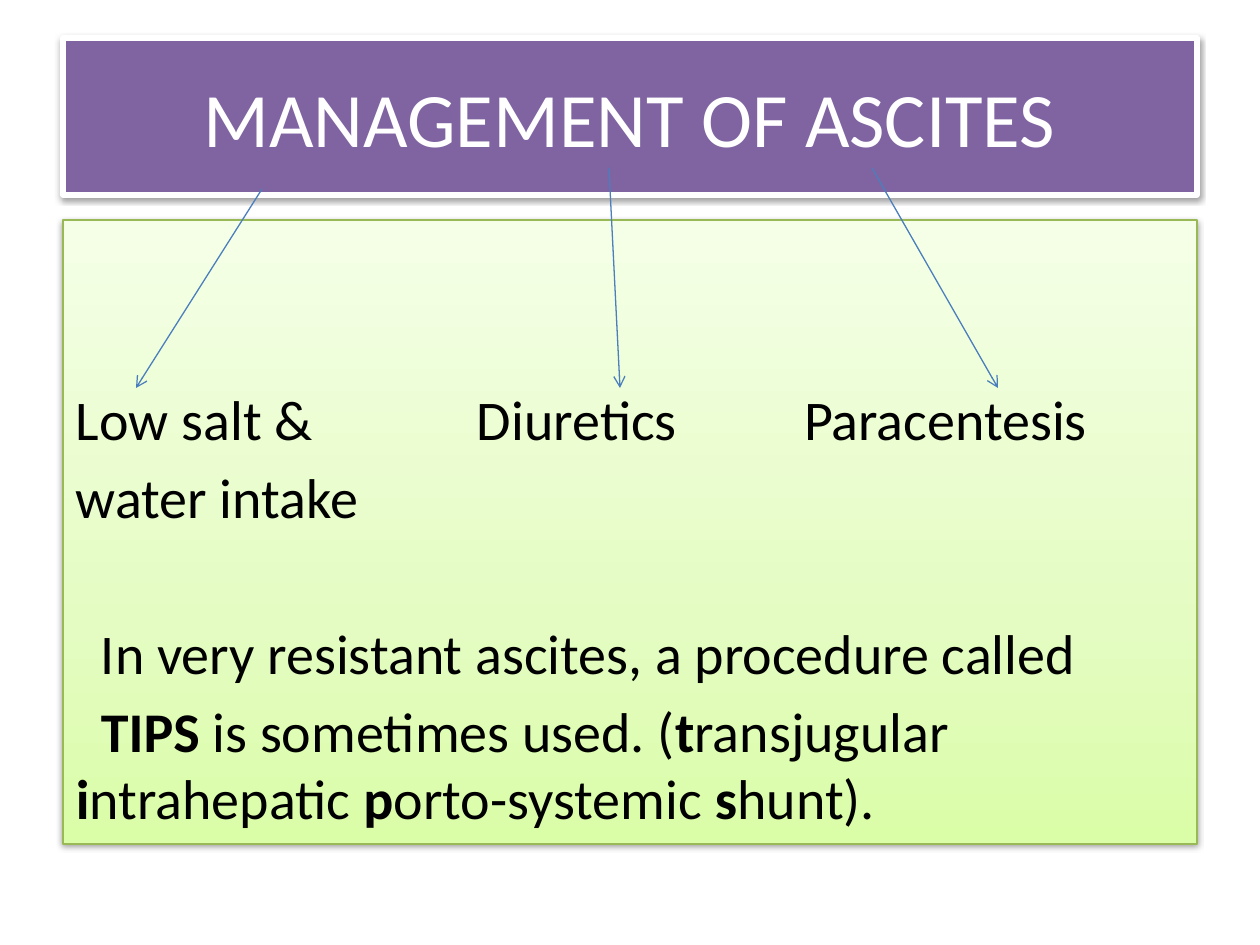
from copy import deepcopy

from lxml import etree
from pptx import Presentation
from pptx.dml.color import RGBColor
from pptx.enum.shapes import MSO_CONNECTOR, MSO_SHAPE
from pptx.enum.text import MSO_ANCHOR, PP_ALIGN
from pptx.oxml.ns import qn
from pptx.util import Pt

PX = 914400 / 126
RECTANGLE = MSO_SHAPE.RECTANGLE
STRAIGHT = MSO_CONNECTOR.STRAIGHT
TOP, MIDDLE = MSO_ANCHOR.TOP, MSO_ANCHOR.MIDDLE
LEFT, CENTER = PP_ALIGN.LEFT, PP_ALIGN.CENTER

WHITE = RGBColor(0xFF, 0xFF, 0xFF)
BLACK = RGBColor(0x00, 0x00, 0x00)
PURPLE = RGBColor(0x80, 0x64, 0xA2)
GREEN = RGBColor(0x98, 0xB9, 0x55)
BLUE = RGBColor(0x4B, 0x7E, 0xBC)
GRADIENT = (
    (0, RGBColor(0xDA, 0xFD, 0xA7)),
    (0.35, RGBColor(0xE4, 0xFC, 0xC2)),
    (1, RGBColor(0xF5, 0xFF, 0xE7)),
)

TITLE_BOX = (63, 38, 1134, 157)
BODY_BOX = (63, 220, 1134, 624)
TITLE_FONT = {"name": "Calibri", "size": Pt(44), "bold": False}
BODY_FONT = {"name": "Calibri", "size": Pt(32)}
LABEL_TOP = 164
LABELS = (("Diuretics", 414, 240), ("Paracentesis", 741, 320))
ARROWS = (((199, -31), (73, 168)), ((546, -52), (557, 168)), ((809, -52), (935, 168)))
PARAGRAPHS = (
    (0, 0, (("Low salt &", False),)),
    (11, 0, (("water intake", False),)),
    (89, 25, (("In very resistant ascites, a procedure called", False),)),
    (11, 25, (
        ("TIPS", True), (" is sometimes used. (", False),
        ("t", True), ("ransjugular ", False),
        ("i", True), ("ntrahepatic ", False),
        ("p", True), ("orto-systemic ", False),
        ("s", True), ("hunt).", False),
    )),
)


def px(length):
    """Turn a length in px into EMU."""
    return round(length * PX)


def set_values(target, values):
    """Set each named attribute of the target."""
    for name, value in values.items():
        setattr(target, name, value)


def add_child(parent, tag, **attributes):
    """Append a drawing element with the given attributes."""
    return etree.SubElement(parent, qn(tag), attributes)


def add_panel(page, box, line_color, line_width):
    """Add a rectangle with an outline and a soft shadow below it."""
    panel = page.shapes.add_shape(RECTANGLE, *map(px, box))
    panel.line.color.rgb = line_color
    panel.line.width = Pt(line_width)
    panel.shadow.inherit = False
    effects = panel._element.spPr.find(qn("a:effectLst"))
    shadow = add_child(effects, "a:outerShdw", blurRad="40000", dist="20000",
                       dir="5400000", rotWithShape="0")
    color = add_child(shadow, "a:srgbClr", val=str(BLACK))
    add_child(color, "a:alpha", val="38000")
    return panel


def fill_gradient(panel):
    """Fill the panel with the three-stop gradient, rising from its bottom."""
    fill = panel.fill
    fill.gradient()
    fill.gradient_angle = 90
    stop_list = panel._element.spPr.find(".//" + qn("a:gsLst"))
    stop_list.append(deepcopy(stop_list[0]))
    for stop, (position, color) in zip(fill.gradient_stops, GRADIENT):
        stop.position = position
        stop.color.rgb = color


def add_span(para, text, font, color):
    """Add a run of formatted text."""
    span = para.add_run()
    span.text = text
    set_values(span.font, font)
    span.font.color.rgb = color


def add_title(page, box):
    """Add the title panel."""
    panel = add_panel(page, box, WHITE, 3)
    panel.fill.solid()
    panel.fill.fore_color.rgb = PURPLE
    panel.text_frame.vertical_anchor = MIDDLE
    panel.text_frame.word_wrap = True
    para = panel.text_frame.paragraphs[0]
    para.alignment = CENTER
    add_span(para, "MANAGEMENT OF ASCITES", TITLE_FONT, WHITE)


def add_body(page, box):
    """Add the panel with the first treatment and the closing remark."""
    panel = add_panel(page, box, GREEN, 0.75)
    fill_gradient(panel)
    frame = panel.text_frame
    set_values(frame, {
        "vertical_anchor": TOP, "word_wrap": True,
        "margin_left": px(13), "margin_right": px(13),
        "margin_top": px(LABEL_TOP), "margin_bottom": px(6),
    })
    for index, (gap, indent, spans) in enumerate(PARAGRAPHS):
        para = frame.add_paragraph() if index else frame.paragraphs[0]
        set_values(para, {"alignment": LEFT, "space_before": px(gap)})
        para._p.get_or_add_pPr().set("indent", str(px(indent)))
        for text, bold in spans:
            add_span(para, text, {**BODY_FONT, "bold": bold}, BLACK)


def add_labels(page, box):
    """Add the other treatments on the first text line of the panel."""
    left, top = box[:2]
    for text, offset, width in LABELS:
        place = (left + offset, top + LABEL_TOP, width, 68)
        frame = page.shapes.add_textbox(*map(px, place)).text_frame
        set_values(frame, {
            "word_wrap": True, "margin_left": 0, "margin_right": 0,
            "margin_top": 0, "margin_bottom": 0,
        })
        add_span(frame.paragraphs[0], text, BODY_FONT, BLACK)


def add_arrows(page, box):
    """Add the arrows from the title to the three treatments."""
    left, top = box[:2]
    for ends in ARROWS:
        points = [px(place) for x, y in ends for place in (left + x, top + y)]
        arrow = page.shapes.add_connector(STRAIGHT, *points)
        arrow.line.color.rgb = BLUE
        arrow.line.width = Pt(0.75)
        add_child(arrow.line._get_or_add_ln(), "a:tailEnd", type="arrow")
        add_child(arrow._element.spPr, "a:effectLst")


def main():
    """Build and save the deck."""
    deck = Presentation()
    deck.slide_width, deck.slide_height = px(1260), px(945)
    page = deck.slides.add_slide(deck.slide_layouts[6])
    add_title(page, TITLE_BOX)
    add_body(page, BODY_BOX)
    add_labels(page, BODY_BOX)
    add_arrows(page, BODY_BOX)
    deck.save("out.pptx")


if __name__ == "__main__":
    main()
